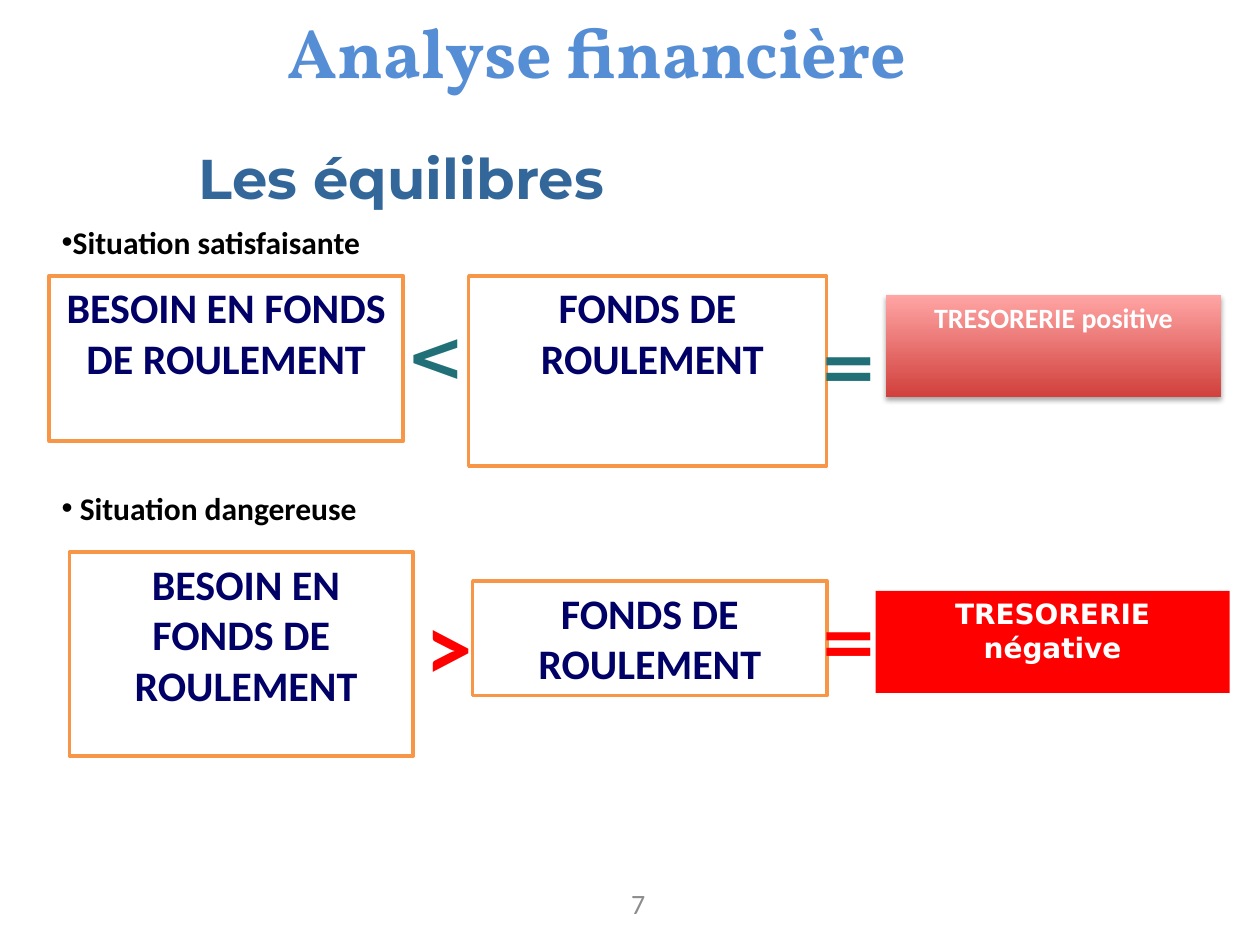
from lxml import etree
from pptx import Presentation, util as u
from pptx.dml.color import RGBColor
from pptx.enum import shapes, text
from pptx.oxml.ns import qn

THEME = {
    "title": {"name": "Vollkorn", "size": 40, "color": "558ED5", "bold": True},
    "subtitle": {"name": "Montserrat", "size": 32, "color": "336699", "bold": True},
    "label": {"name": "Calibri", "size": 18, "color": "000000", "bold": True},
    "box": {"name": "Calibri", "size": 24, "color": "000066", "bold": True},
    "sign": {"name": "DejaVu Sans", "size": 40, "color": "217078", "bold": True},
    "alert": {"name": "DejaVu Sans", "size": 40, "color": "FF0000", "bold": True},
    "greater": {"name": "Calibri", "size": 54, "color": "FF0000", "bold": True},
    "positive": {"name": "Calibri", "size": 16, "color": "FFFFFF", "bold": True},
    "negative": {"name": "DejaVu Sans", "size": 16, "color": "FFFFFF", "bold": True},
    "number": {"name": "Calibri", "size": 16, "color": "8C8C8C", "bold": False},
    "fill": "FFFFFF", "outline": "F79646", "danger": "FF0000",
    "gradient": ("D1403C", "FFA6A5"),
}

# Content: places are left, top, width, height in centimetres
TITLE = ("Analyse financière ", (0.89, 0.05, 22.58, 1.57))
SUBTITLE = ("Les équilibres", (3.76, 2.77, 19.61, 1.63))
PAGE_NUMBER = ("7", (9.12, 18.06, 8.05, 0.89))
SITUATIONS = [
    {
        "label": ("Situation satisfaisante", (0.99, 4.37, 8.97, 1.02)),
        "boxes": [
            (["BESOIN EN FONDS DE ROULEMENT"], (0.99, 5.56, 7.14, 3.33)),
            (["FONDS DE", " ROULEMENT"], (9.45, 5.56, 7.21, 3.84)),
        ],
        "signs": [
            ("<", "sign", (8.2, 6.15, 0.13, 1.96)),
            ("=", "sign", (16.28, 6.35, 0.71, 1.96)),
        ],
        "result": ("TRESORERIE positive", "positive", (17.86, 5.94, 6.76, 2.06)),
    },
    {
        "label": (" Situation dangereuse", (0.99, 9.73, 8.97, 1.02)),
        "boxes": [
            ([" BESOIN EN FONDS DE", " ROULEMENT"], (1.4, 11.13, 6.93, 4.11)),
            (["FONDS DE ROULEMENT"], (9.53, 11.71, 7.14, 2.31)),
        ],
        "signs": [
            (">", "greater", (8.33, 11.71, 0.71, 2.57)),
            ("=", "alert", (16.28, 11.91, 0.71, 1.96)),
        ],
        "result": ("TRESORERIE négative", "negative", (17.65, 11.91, 7.14, 2.06)),
    },
]


def rgb(value):
    return RGBColor.from_string(value)


def write(shape, lines, style, align=text.PP_ALIGN.LEFT, **frame_format):
    frame = shape.text_frame
    settings = {"word_wrap": True, "auto_size": text.MSO_AUTO_SIZE.NONE,
                "vertical_anchor": text.MSO_ANCHOR.TOP, **frame_format}
    for name, value in settings.items():
        setattr(frame, name, value)
    font_format = THEME[style]
    for index, line in enumerate(lines):
        paragraph = frame.add_paragraph() if index else frame.paragraphs[0]
        paragraph.alignment = align
        paragraph.space_before = u.Pt(0)
        run = paragraph.add_run()
        run.text = line
        for name in ("name", "bold"):
            setattr(run.font, name, font_format[name])
        run.font.size = u.Pt(font_format["size"])
        run.font.color.rgb = rgb(font_format["color"])


def move(shape, place):
    for name, value in zip(("left", "top", "width", "height"), place):
        setattr(shape, name, u.Cm(value))


def add_text(slide, words, style, place, **frame_format):
    shape = slide.shapes.add_textbox(*map(u.Cm, place))
    write(shape, [words], style, **frame_format)
    return shape


def add_box(slide, lines, style, place, fill=None, outline=None):
    shape = slide.shapes.add_shape(shapes.MSO_SHAPE.RECTANGLE, *map(u.Cm, place))
    if fill:
        shape.fill.solid()
        shape.fill.fore_color.rgb = rgb(fill)
    if outline:
        shape.line.color.rgb = rgb(outline)
        shape.line.width = u.Pt(2)
    else:
        shape.line.fill.background()
    shape.shadow.inherit = False
    write(shape, lines, style, text.PP_ALIGN.CENTER)
    return shape


def add_gradient(shape, colors):
    shape.fill.gradient()
    shape.fill.gradient_angle = 90
    for position, (stop, color) in enumerate(zip(shape.fill.gradient_stops, colors)):
        stop.position = position
        stop.color.rgb = rgb(color)


def add_shadow(shape):
    effects = shape.element.spPr.find(qn("a:effectLst"))
    shadow = etree.SubElement(effects, qn("a:outerShdw"), blurRad=str(u.Pt(3.1)),
                              dist=str(u.Pt(1.8)), dir="5400000", rotWithShape="0")
    color = etree.SubElement(shadow, qn("a:srgbClr"), val="000000")
    etree.SubElement(color, qn("a:alpha"), val="35000")


def add_bullet(paragraph):
    properties = paragraph._p.get_or_add_pPr()
    properties.set("marL", "0")
    properties.set("indent", "0")
    etree.SubElement(properties, qn("a:buFont"), typeface="Arial")
    etree.SubElement(properties, qn("a:buChar"), char="•")


def main():
    presentation = Presentation()
    presentation.slide_width, presentation.slide_height = u.Cm(25.4), u.Cm(19.05)
    slide = presentation.slides.add_slide(presentation.slide_layouts[3])

    # Headings
    words, place = TITLE
    move(slide.shapes.title, place)
    write(slide.shapes.title, [words], "title", text.PP_ALIGN.CENTER)
    words, place = SUBTITLE
    add_text(slide, words, "subtitle", place)

    # One comparison per situation
    for body_index, situation in enumerate(SITUATIONS, start=1):
        words, place = situation["label"]
        label = slide.placeholders[body_index]
        move(label, place)
        write(label, [words], "label")
        add_bullet(label.text_frame.paragraphs[0])

        for lines, place in situation["boxes"]:
            add_box(slide, lines, "box", place, THEME["fill"], THEME["outline"])

        words, style, place = situation["result"]
        if style == "positive":
            result = add_box(slide, [words], style, place)
            add_gradient(result, THEME["gradient"])
            add_shadow(result)
        else:
            add_box(slide, [words], style, place, THEME["danger"])

        for words, style, place in situation["signs"]:
            margins = {"margin_left": 0, "margin_right": 0} if words == "<" else {}
            add_text(slide, words, style, place, **margins)

    # Page number, set slightly up and left of the middle of its box
    words, place = PAGE_NUMBER
    add_text(slide, words, "number", place, align=text.PP_ALIGN.CENTER,
             vertical_anchor=text.MSO_ANCHOR.MIDDLE,
             margin_right=u.Cm(0.81), margin_bottom=u.Cm(0.71))

    presentation.save("out.pptx")


if __name__ == "__main__":
    main()
